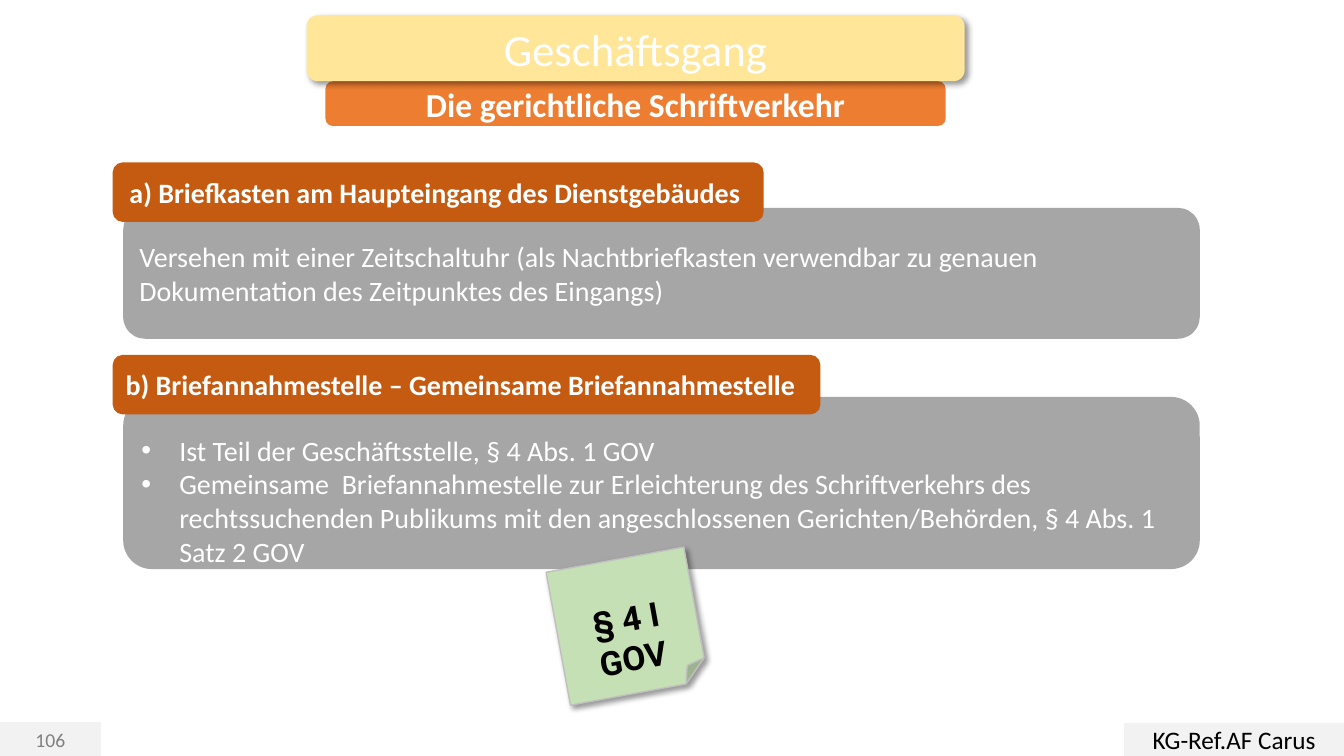
from dataclasses import dataclass

from lxml import etree
from pptx import Presentation
from pptx.dml.color import RGBColor
from pptx.enum import shapes, text
from pptx.oxml import ns
from pptx.util import Pt

SHAPE = shapes.MSO_SHAPE
ALIGN = text.PP_ALIGN
ANCHOR = text.MSO_ANCHOR


@dataclass(frozen=True)
class Theme:
    font: str = "Calibri"
    note_font: str = "Roboto"
    white: str = "FFFFFF"
    black: str = "000000"
    title: str = "FFE699"
    subtitle: str = "ED7D31"
    label: str = "C55A11"
    body: str = "A6A6A6"
    footer: str = "F2F2F2"
    number: str = "808080"
    note: str = "C5E0B4"
    note_line: str = "BFBFBF"
    title_size: int = 32
    heading_size: int = 24
    text_size: int = 20
    footer_size: int = 18
    number_size: int = 14


T = Theme()


def rgb(value):
    return RGBColor.from_string(value)


def add_shadow(sp):
    effects = sp._element.spPr.find(ns.qn("a:effectLst"))
    shadow = etree.SubElement(effects, ns.qn("a:outerShdw"), blurRad=str(Pt(4)),
                              dist=str(Pt(3)), dir="2700000", algn="tl", rotWithShape="0")
    color = etree.SubElement(shadow, ns.qn("a:srgbClr"), val=T.black)
    etree.SubElement(color, ns.qn("a:alpha"), val="40000")


def add_box(s, box, fill, kind=SHAPE.ROUNDED_RECTANGLE, line=None, shadow=False):
    sp = s.shapes.add_shape(kind, *(Pt(v) for v in box))
    sp.shadow.inherit = False
    sp.fill.solid()
    sp.fill.fore_color.rgb = rgb(fill)
    if line:
        sp.line.color.rgb = rgb(line)
        sp.line.width = Pt(1)
    else:
        sp.line.fill.background()
    if shadow:
        add_shadow(sp)
    return sp


def add_bullet(p, indent=27):
    pPr = p._p.get_or_add_pPr()
    pPr.set("marL", str(Pt(indent)))
    pPr.set("indent", str(-Pt(indent)))
    etree.SubElement(pPr, ns.qn("a:buFont"), typeface="Arial")
    etree.SubElement(pPr, ns.qn("a:buChar"), char="•")


def write(sp, lines, size=T.text_size, color=T.white, font=T.font, bold=False,
          align=ALIGN.CENTER, anchor=ANCHOR.MIDDLE, top=3.6, bottom=3.6, bullets=False):
    tf = sp.text_frame
    tf.word_wrap = True
    tf.vertical_anchor = anchor
    tf.margin_top, tf.margin_bottom = Pt(top), Pt(bottom)
    for i, line in enumerate(lines):
        p = tf.add_paragraph() if i else tf.paragraphs[0]
        p.alignment = align
        if bullets:
            add_bullet(p)
        r = p.add_run()
        r.text = line
        r.font.size = Pt(size)
        r.font.name = font
        r.font.bold = bold
        r.font.color.rgb = rgb(color)


def add_header(s, box, title, subtitle):
    x, y, w, h = box
    inset = 13.5
    sp = add_box(s, (x + inset, y + h, w - 2 * inset, 32), T.subtitle)
    write(sp, [subtitle], size=T.heading_size, bold=True, top=0, bottom=0)
    sp = add_box(s, box, T.title, shadow=True)
    write(sp, [title], size=T.title_size)


def add_section(s, box, label, label_width, lines, overlap, label_align, **body_format):
    x, y, w, h = box
    label_height = 42.5
    sp = add_box(s, (x, y + label_height - overlap, w, h), T.body)
    write(sp, lines, align=ALIGN.LEFT, **body_format)
    sp = add_box(s, (x - 7.5, y, label_width, label_height), T.label)
    write(sp, [label], bold=True, align=label_align)


def add_note(s, box, lines):
    sp = add_box(s, box, T.note, SHAPE.FOLDED_CORNER, T.note_line, shadow=True)
    sp.rotation = 349.6
    write(sp, lines, size=T.heading_size, color=T.black, font=T.note_font,
          bold=True, anchor=ANCHOR.TOP, top=28)


def add_footer(s, box, number, author):
    x, y, w, h = box
    author_width = 157
    sp = add_box(s, (x, y, 72, h), T.footer, SHAPE.RECTANGLE, T.footer)
    write(sp, [number], size=T.number_size, color=T.number, top=0, bottom=0)
    sp = add_box(s, (x + w - author_width, y, author_width, h), T.footer, SHAPE.RECTANGLE)
    write(sp, [author], size=T.footer_size, color=T.black, top=0, bottom=0)


def main():
    prs = Presentation()
    prs.slide_width, prs.slide_height = Pt(960), Pt(540)
    s = prs.slides.add_slide(prs.slide_layouts[6])
    add_header(s, (219, 11, 470, 47), "Geschäftsgang", "Die gerichtliche Schriftverkehr")
    add_section(s, (88, 116, 769, 93.5),
                "a) Briefkasten am Haupteingang des Dienstgebäudes ", 465,
                ["Versehen mit einer Zeitschaltuhr (als Nachtbriefkasten verwendbar zu genauen "
                 "Dokumentation des Zeitpunktes des Eingangs)"],
                10, ALIGN.CENTER)
    add_section(s, (88, 253.5, 769, 123),
                "b) Briefannahmestelle – Gemeinsame Briefannahmestelle", 505.5,
                ["Ist Teil der Geschäftsstelle, § 4 Abs. 1 GOV",
                 "Gemeinsame  Briefannahmestelle zur Erleichterung des Schriftverkehrs des "
                 "rechtssuchenden Publikums mit den angeschlossenen Gerichten/Behörden, "
                 "§ 4 Abs. 1 Satz 2 GOV"],
                12.5, ALIGN.LEFT, anchor=ANCHOR.TOP, top=20, bottom=0, bullets=True)
    add_note(s, (398, 399, 100, 96.5), ["§ 4 I", "GOV"])
    add_footer(s, (0, 516.5, 960, 23.5), "106", "KG-Ref.AF Carus")
    prs.save("out.pptx")


if __name__ == "__main__":
    main()
